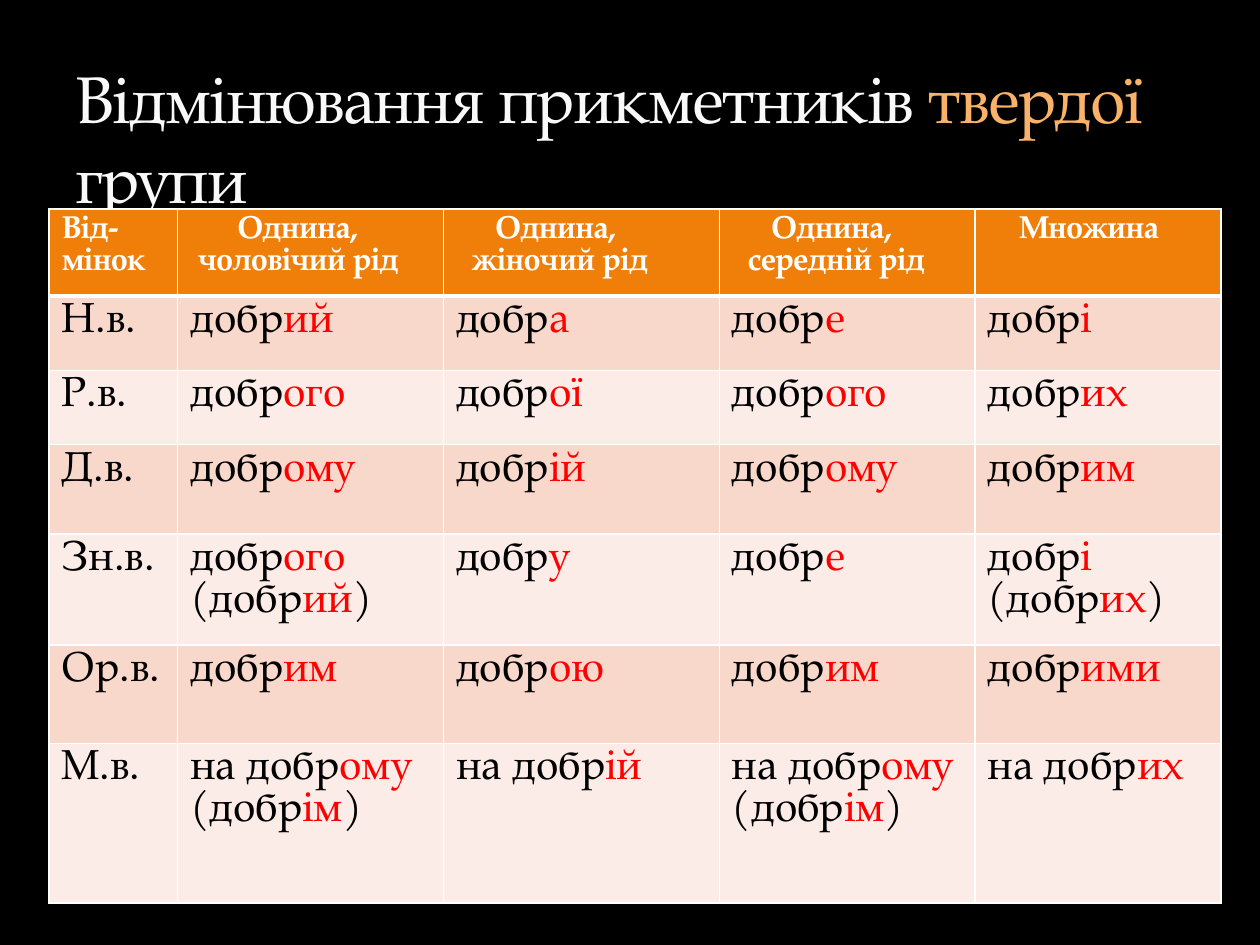
from dataclasses import dataclass

from lxml import etree
from pptx import Presentation
from pptx.dml.color import RGBColor
from pptx.enum.text import MSO_ANCHOR, MSO_AUTO_SIZE, PP_ALIGN
from pptx.oxml.ns import qn
from pptx.util import Inches, Pt

BOTTOM = MSO_ANCHOR.BOTTOM
LEFT = PP_ALIGN.LEFT
NO_AUTOFIT = MSO_AUTO_SIZE.NONE
TITLE_ONLY = 5


@dataclass(frozen=True)
class Theme:
    """Colours, font and type sizes of the slide."""
    font: str = "TeX Gyre Pagella"
    background: str = "000000"
    title: str = "F9F9F9"
    title_accent: str = "F9B268"
    header_text: str = "FFFFFF"
    header_fill: str = "F07F09"
    text: str = "000000"
    ending: str = "FF0000"
    bands: tuple = ("F9D8CC", "FCECE7")
    border: str = "FFFFFF"
    title_size: float = 37.8
    title_leading: float = 45.7
    header_size: float = 18
    body_size: float = 24


THEME = Theme()
COLUMN_WIDTHS = (1.02, 2.11, 2.19, 2.03, 1.95)
ROW_HEIGHTS = (0.69, 0.59, 0.59, 0.71, 0.88, 0.78, 1.27)
TITLE = "Відмінювання прикметників *твердої* групи"
HEADERS = (
    (("Від-", 0), ("мінок", 0)),
    (("Однина,", 27), ("чоловічий рід", 4.5)),
    (("Однина,", 22.5), ("жіночий рід", 9)),
    (("Однина,", 22.5), ("середній рід", 9)),
    (("Множина", 18),),
)
CASES = (
    ("Н.в.", "добр*ий*", "добр*а*", "добр*е*", "добр*і*"),
    ("Р.в.", "добр*ого*", "добр*ої*", "добр*ого*", "добр*их*"),
    ("Д.в.", "добр*ому*", "добр*ій*", "добр*ому*", "добр*им*"),
    ("Зн.в.", "добр*ого*\n(добр*ий*)", "добр*у*", "добр*е*", "добр*і*\n(добр*их*)"),
    ("Ор.в.", "добр*им*", "добр*ою*", "добр*им*", "добр*ими*"),
    ("М.в.", "на добр*ому*\n(добр*ім*)", "на добр*ій*",
     "на добр*ому*\n(добр*ім*)", "на добр*их*"),
)


def write_marked(paragraph, marked, size, colours, bold=False):
    """Write text whose parts between asterisks take the second colour."""
    for index, part in enumerate(marked.split("*")):
        if part:
            run = paragraph.add_run()
            run.text = part
            run.font.name = THEME.font
            run.font.size = Pt(size)
            run.font.bold = bold
            run.font.color.rgb = RGBColor.from_string(colours[index % 2])


def add_title(slide):
    """Place and format the title placeholder."""
    title = slide.shapes.title
    title.left, title.top = Inches(0.5), Inches(0.39)
    title.width, title.height = Inches(9), Inches(1.33)
    frame = title.text_frame
    frame.auto_size = NO_AUTOFIT
    frame.word_wrap = True
    frame.vertical_anchor = BOTTOM
    frame.margin_bottom = 0
    paragraph = frame.paragraphs[0]
    paragraph.alignment = LEFT
    paragraph.line_spacing = Pt(THEME.title_leading)
    write_marked(paragraph, TITLE, THEME.title_size, (THEME.title, THEME.title_accent))
    for run in paragraph.runs:
        run.font._element.set("spc", "-100")


def set_borders(cell, bottom_width):
    """Draw the four cell borders beneath the fill in the schema order."""
    properties = cell._tc.get_or_add_tcPr()
    widths = {"lnL": 1, "lnR": 1, "lnT": 1, "lnB": bottom_width}
    for position, (side, width) in enumerate(widths.items()):
        line = etree.Element(qn(f"a:{side}"), w=str(Pt(width)))
        fill = etree.SubElement(line, qn("a:solidFill"))
        etree.SubElement(fill, qn("a:srgbClr"), val=THEME.border)
        properties.insert(position, line)


def fill_cell(cell, lines, size, colours, fill, bold=False, bottom_width=1):
    """Fill a cell with lines given as pairs of marked text and indent."""
    cell.fill.solid()
    cell.fill.fore_color.rgb = RGBColor.from_string(fill)
    set_borders(cell, bottom_width)
    frame = cell.text_frame
    for index, (text, indent) in enumerate(lines):
        paragraph = frame.add_paragraph() if index else frame.paragraphs[0]
        paragraph.line_spacing = Pt(size)
        paragraph._p.get_or_add_pPr().set("marL", str(Pt(indent)))
        write_marked(paragraph, text, size, colours, bold)


def add_declension_table(slide):
    """Add the table of cases with its header and banded rows."""
    table = slide.shapes.add_table(
        len(ROW_HEIGHTS), len(COLUMN_WIDTHS), Inches(0.39), Inches(1.66),
        Inches(sum(COLUMN_WIDTHS)), Inches(sum(ROW_HEIGHTS))).table
    for column, width in zip(table.columns, COLUMN_WIDTHS):
        column.width = Inches(width)
    for row, height in zip(table.rows, ROW_HEIGHTS):
        row.height = Inches(height)
    for column, lines in enumerate(HEADERS):
        fill_cell(table.cell(0, column), lines, THEME.header_size,
                  (THEME.header_text,) * 2, THEME.header_fill, True, 3)
    for row, forms in enumerate(CASES, start=1):
        for column, form in enumerate(forms):
            lines = [(line, 0) for line in form.split("\n")]
            fill_cell(table.cell(row, column), lines, THEME.body_size,
                      (THEME.text, THEME.ending), THEME.bands[(row - 1) % 2])


def main():
    """Build and save the presentation."""
    presentation = Presentation()
    presentation.slide_width, presentation.slide_height = Inches(10), Inches(7.5)
    slide = presentation.slides.add_slide(presentation.slide_layouts[TITLE_ONLY])
    slide.background.fill.solid()
    slide.background.fill.fore_color.rgb = RGBColor.from_string(THEME.background)
    add_title(slide)
    add_declension_table(slide)
    presentation.save("out.pptx")


if __name__ == "__main__":
    main()
